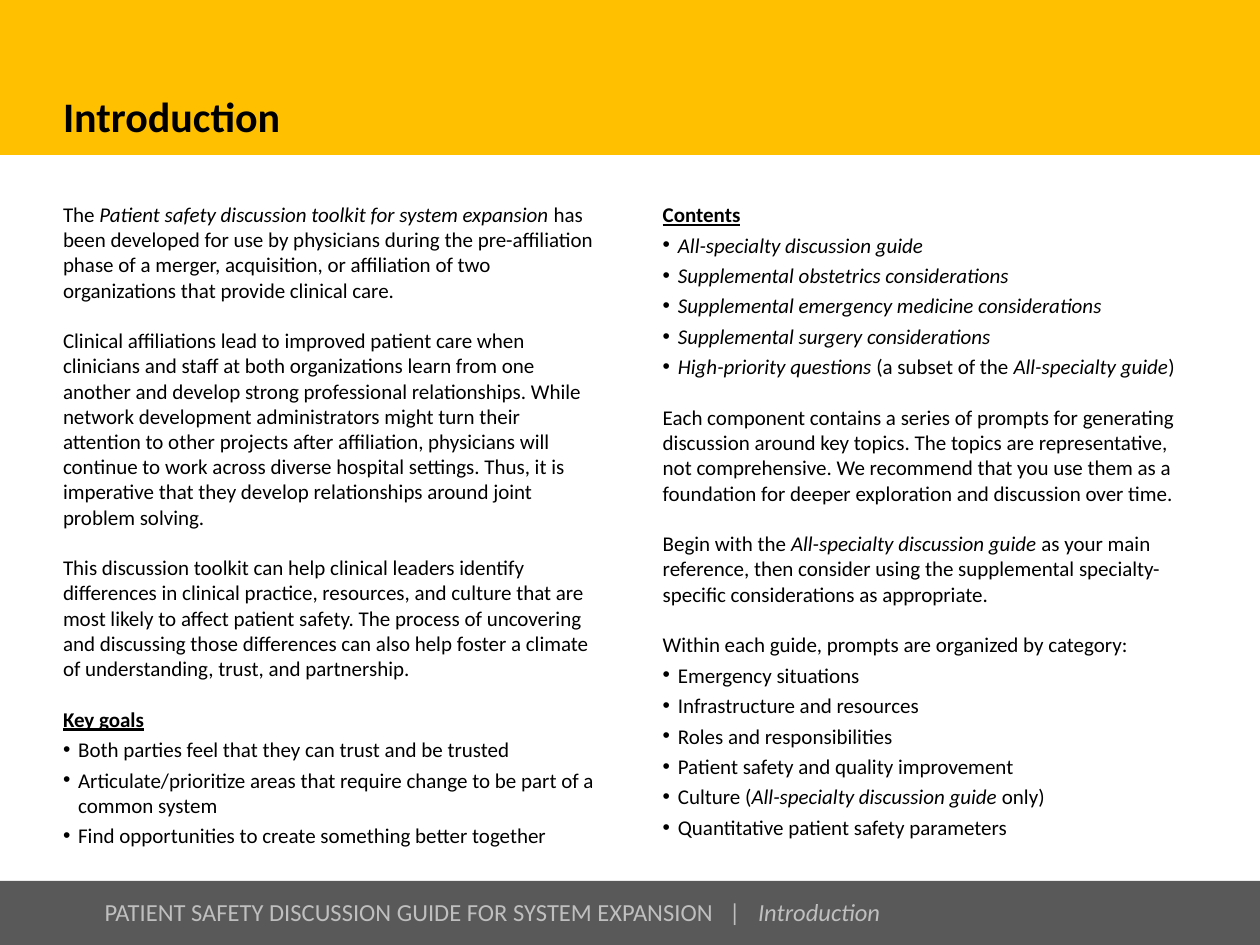
"""Build the Introduction slide of a patient safety discussion guide."""
from lxml.etree import SubElement
from pptx import Presentation
from pptx.dml.color import RGBColor
from pptx.enum.shapes import MSO_SHAPE
from pptx.enum.text import MSO_ANCHOR, MSO_AUTO_SIZE, PP_ALIGN
from pptx.oxml.ns import qn
from pptx.util import Inches, Pt


def set_frame(sp, box, anchor):
    sp.left, sp.top, sp.width, sp.height = [Inches(v) for v in box]
    tf = sp.text_frame
    tf.margin_left = tf.margin_right = tf.margin_top = tf.margin_bottom = 0
    tf.word_wrap = True
    tf.auto_size = MSO_AUTO_SIZE.NONE
    tf.vertical_anchor = anchor
    return tf


def add_runs(p, text, size, color, bold=False):
    """Add text to a paragraph, with *asterisks* around italic parts."""
    p.alignment = PP_ALIGN.LEFT
    for i, line in enumerate(text.split("\n")):
        if i:
            p.add_line_break()
        for j, part in enumerate(line.split("*")):
            if part:
                r = p.add_run()
                r.text = part
                r.font.name = "Calibri"
                r.font.size = Pt(size)
                r.font.bold = bold
                r.font.italic = j % 2 == 1
                r.font.color.rgb = RGBColor.from_string(color)


LEFT = [
    ("text", "The *Patient safety discussion toolkit for system expansion* has been developed for use by "
             "physicians during the pre-affiliation phase of a merger, acquisition, or affiliation of two "
             "organizations that provide clinical care."),
    ("text", "Clinical affiliations lead to improved patient care when clinicians and staff at both "
             "organizations learn from one another and develop strong professional relationships. While "
             "network development administrators might turn their attention to other projects after "
             "affiliation, physicians will continue to work across diverse hospital settings. Thus, it is "
             "imperative that they develop relationships around joint problem solving."),
    ("text", "This discussion toolkit can help clinical leaders identify differences in clinical practice, "
             "resources, and culture that are most likely to affect patient safety. The process of "
             "uncovering and discussing those differences can also help foster a climate of "
             "understanding, trust, and partnership."),
    ("head", "Key goals"),
    ("item", "Both parties feel that they can trust and be trusted"),
    ("item", "Articulate/prioritize areas that require change to be part of a common system"),
    ("item", "Find opportunities to create something better together"),
]
RIGHT = [
    ("head", "Contents"),
    ("item", "*All-specialty discussion guide*"),
    ("item", "*Supplemental obstetrics considerations*"),
    ("item", "*Supplemental emergency medicine considerations*"),
    ("item", "*Supplemental surgery considerations*"),
    ("item", "*High-priority questions* (a subset of the *All-specialty guide*)"),
    ("text", "Each component contains a series of prompts for generating discussion around key topics. "
             "The topics are representative, \nnot comprehensive. We recommend that you use them as a "
             "foundation for deeper exploration and discussion over time."),
    ("text", "Begin with the *All-specialty discussion guide* as your main reference, then consider using "
             "the supplemental specialty-specific considerations as appropriate."),
    ("text", "Within each guide, prompts are organized by category:"),
    ("item", "Emergency situations"),
    ("item", "Infrastructure and resources"),
    ("item", "Roles and responsibilities"),
    ("item", "Patient safety and quality improvement"),
    ("item", "Culture (*All-specialty discussion guide* only)"),
    ("item", "Quantitative patient safety parameters"),
]

prs = Presentation()
prs.slide_width, prs.slide_height = Inches(10), Inches(7.5)
s = prs.slides.add_slide(prs.slide_layouts[3])
title, left, right = s.placeholders

for top, height, color in [(0, 1.23, "FFC000"), (6.99, 0.51, "595959")]:
    band = s.shapes.add_shape(MSO_SHAPE.RECTANGLE, 0, Inches(top), prs.slide_width, Inches(height))
    band.fill.solid()
    band.fill.fore_color.rgb = RGBColor.from_string(color)
    band.line.fill.background()
    band.shadow.inherit = False
    title.element.addprevious(band.element)

tf = set_frame(title, (0.5, 0.72, 9, 0.4), MSO_ANCHOR.MIDDLE)
add_runs(tf.paragraphs[0], "Introduction", 24, "000000", bold=True)

for sp, box, paragraphs in [(left, (0.5, 1.6, 4.25, 5.47), LEFT), (right, (5.26, 1.6, 4.35, 5.47), RIGHT)]:
    tf = set_frame(sp, box, MSO_ANCHOR.TOP)
    for i, (kind, text) in enumerate(paragraphs):
        p = tf.add_paragraph() if i else tf.paragraphs[0]
        add_runs(p, text, 12, "000000", bold=kind == "head")
        p.space_before = Pt(3 if kind == "item" else 14.5 if i else 0)
        indent = Inches(0.12) if kind == "item" else 0
        pPr = p._p.get_or_add_pPr()
        pPr.set("marL", str(indent))
        pPr.set("indent", str(-indent))
        if kind == "item":
            SubElement(pPr, qn("a:buFont"), typeface="Arial")
            SubElement(pPr, qn("a:buChar"), char="•")
        else:
            SubElement(pPr, qn("a:buNone"))
        if kind == "head":
            p.runs[0].font.underline = True

footer = s.shapes.add_textbox(0, 0, 0, 0)
tf = set_frame(footer, (0.83, 7.16, 8.87, 0.2), MSO_ANCHOR.MIDDLE)
p = tf.paragraphs[0]
p.line_spacing = 0.82
add_runs(p, "PATIENT SAFETY DISCUSSION GUIDE FOR SYSTEM EXPANSION   |   *Introduction*", 14, "BFBFBF")

prs.save("out.pptx")
